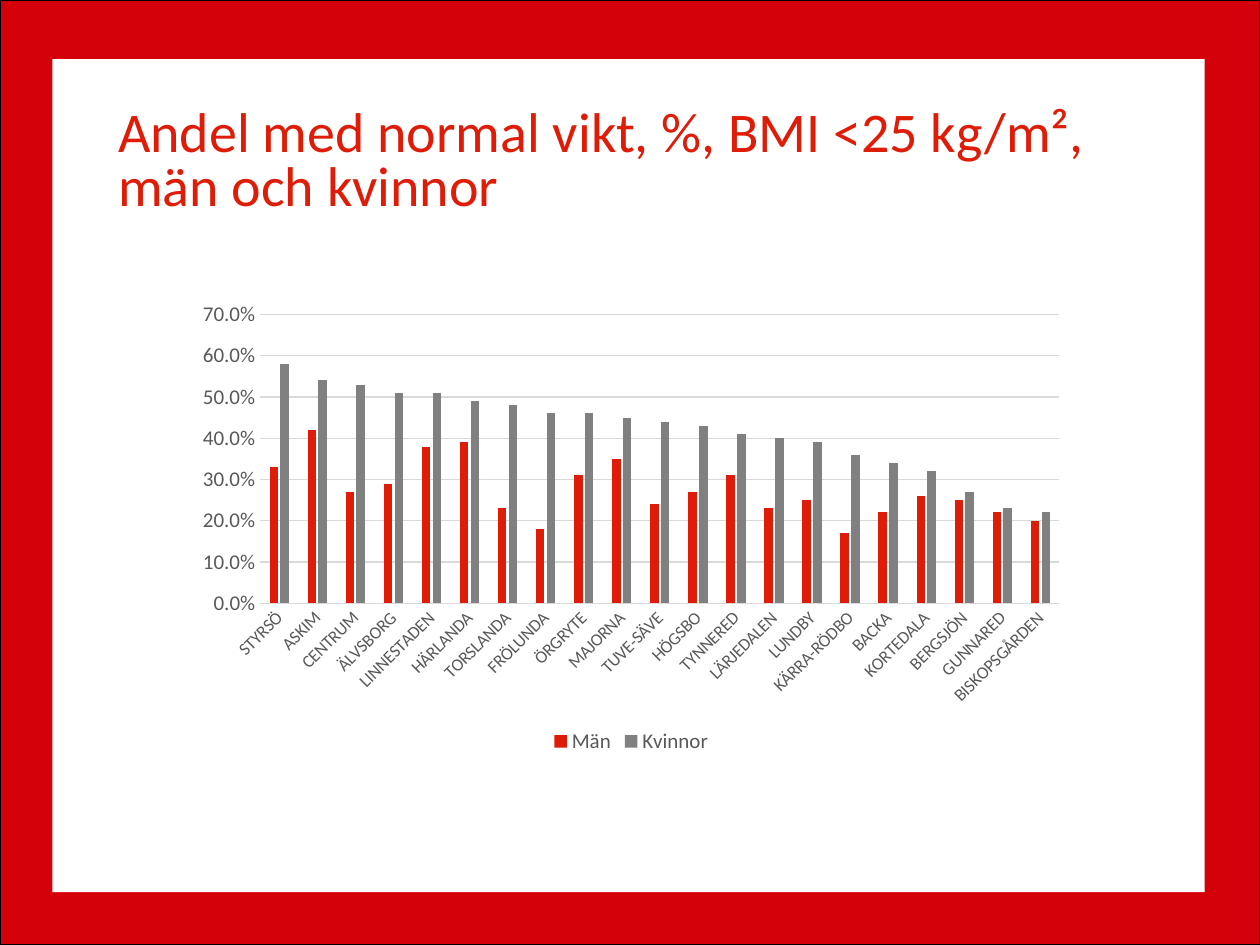
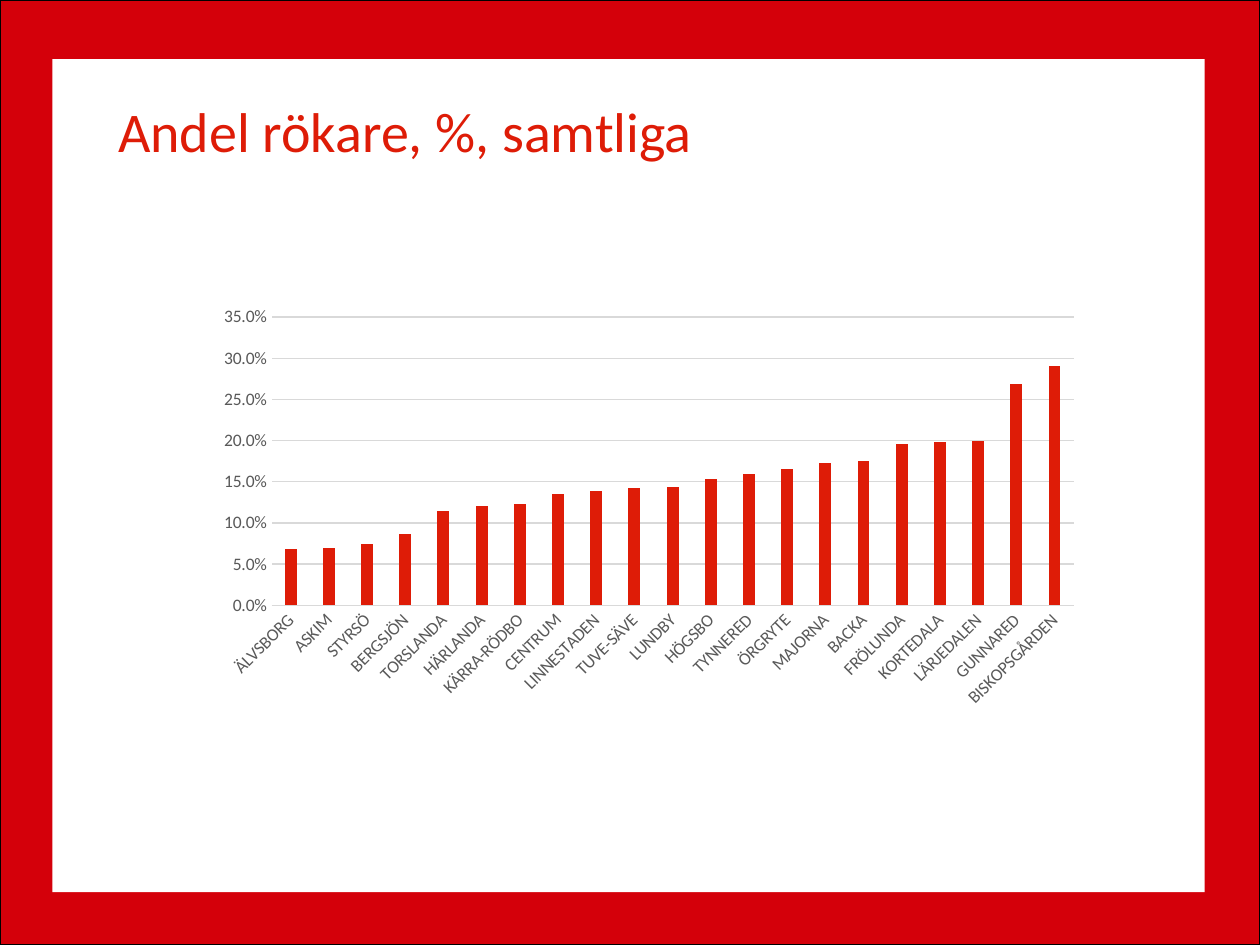
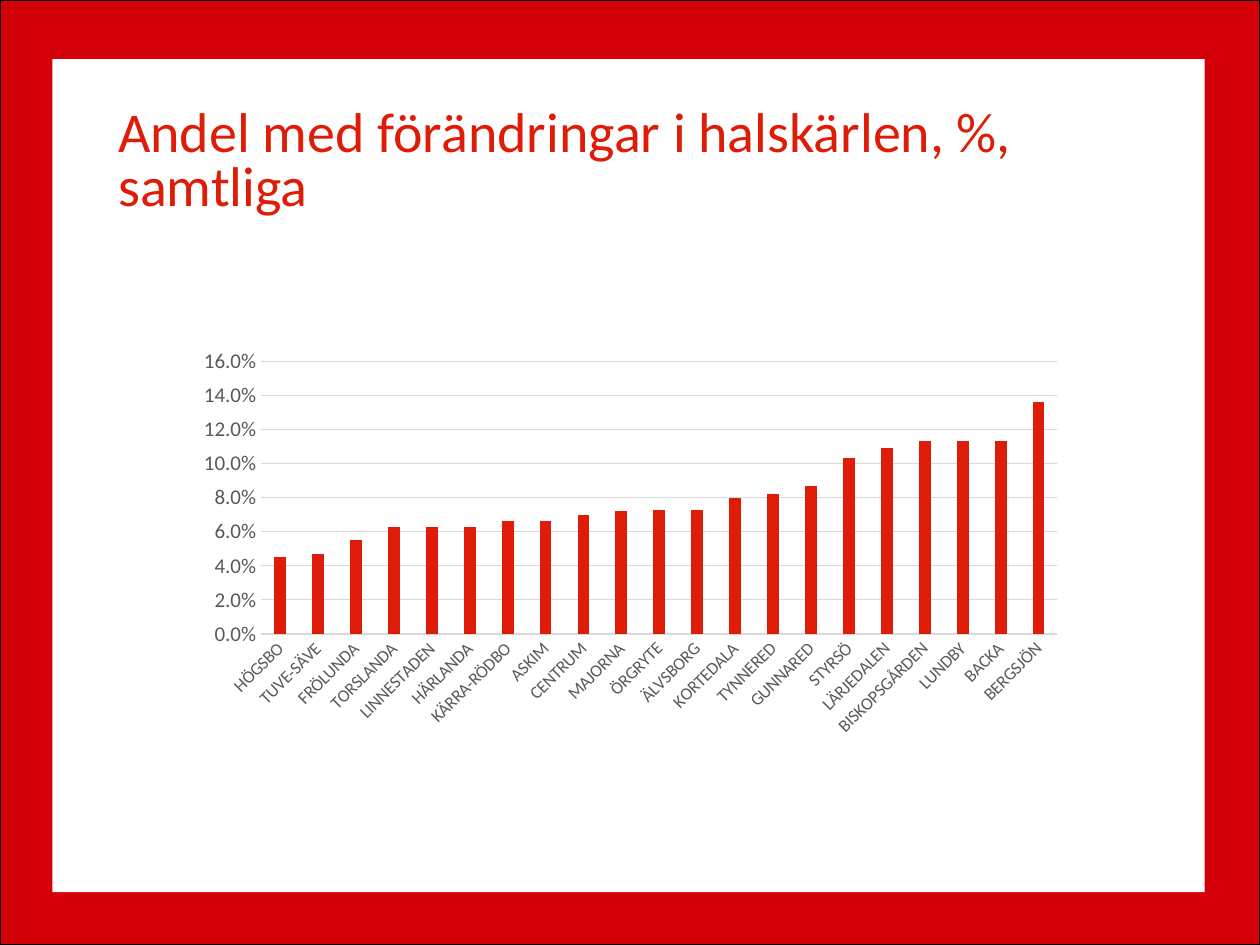
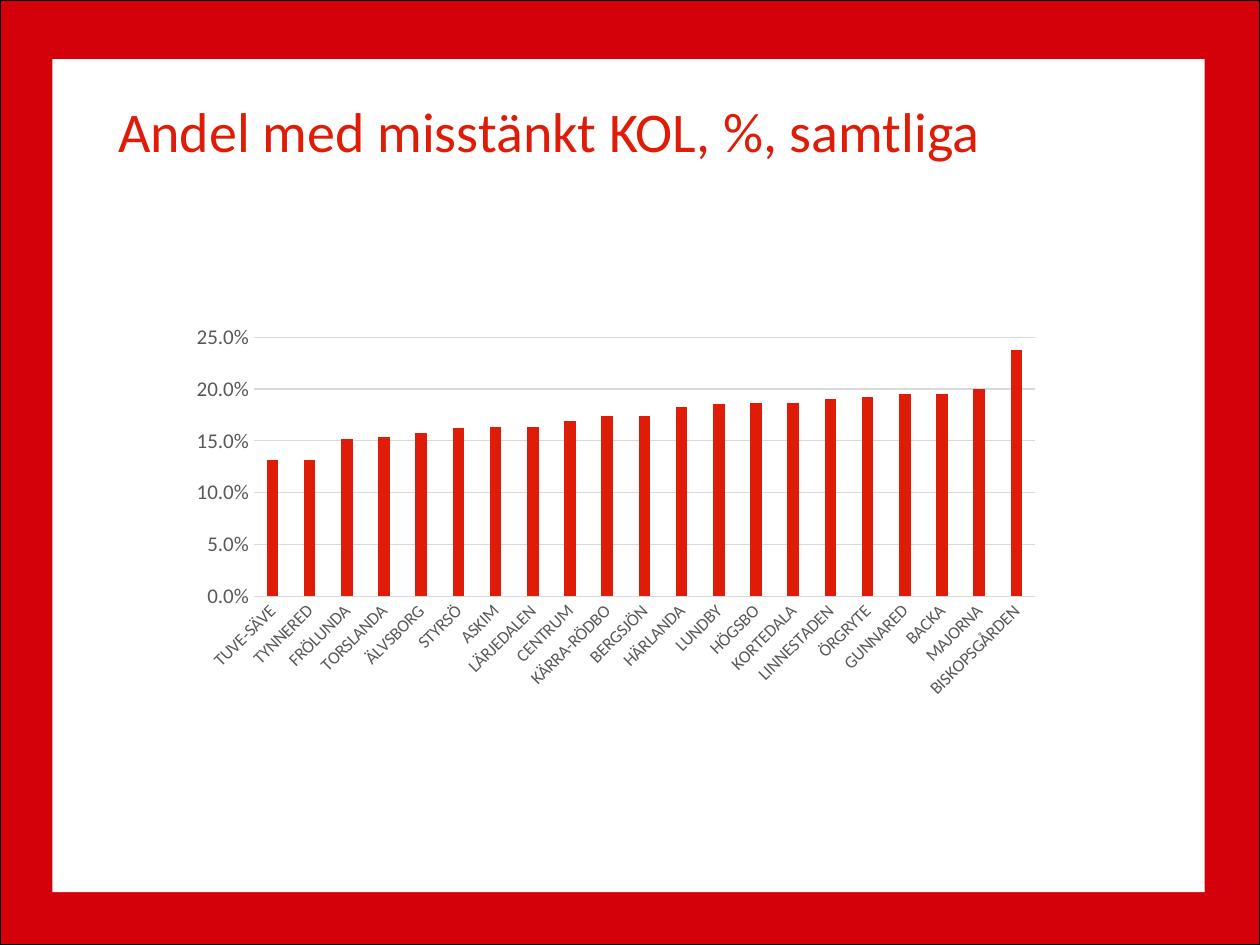
from lxml import etree
from pptx import Presentation
from pptx.chart.data import CategoryChartData
from pptx.dml.color import RGBColor
from pptx.enum.chart import XL_CHART_TYPE, XL_LEGEND_POSITION, XL_TICK_MARK
from pptx.enum.shapes import MSO_SHAPE
from pptx.enum.text import MSO_ANCHOR
from pptx.oxml.ns import qn
from pptx.util import Pt

COLUMNS = XL_CHART_TYPE.COLUMN_CLUSTERED
LEGEND_BOTTOM = XL_LEGEND_POSITION.BOTTOM
NO_TICK = XL_TICK_MARK.NONE
RECT = MSO_SHAPE.RECTANGLE
TOP = MSO_ANCHOR.TOP

FONT = "Calibri"
COLORS = {
    "frame": "D4000A",
    "frame_line": "000000",
    "paper": "FFFFFF",
    "title": "DE1C07",
    "label": "595959",
    "grid": "D9D9D9",
}
SERIES_COLORS = ["DE1C07", "808080"]
SLIDE_W, SLIDE_H = 720, 540
PLOT_AREA = {"x": 0.081, "y": 0.142, "w": 0.903, "h": 0.565}

CHARTS = [
    {
        "title": "Andel med normal vikt, %, BMI <25 kg/m², män och kvinnor",
        "box": (105.8, 167.3, 509.8, 266.4),
        "value_size": 12,
        "districts": "STYRSÖ ASKIM CENTRUM ÄLVSBORG LINNESTADEN HÄRLANDA TORSLANDA "
                     "FRÖLUNDA ÖRGRYTE MAJORNA TUVE-SÄVE HÖGSBO TYNNERED LÄRJEDALEN "
                     "LUNDBY KÄRRA-RÖDBO BACKA KORTEDALA BERGSJÖN GUNNARED BISKOPSGÅRDEN",
        "series": {
            "Män": [0.33, 0.42, 0.27, 0.29, 0.38, 0.39, 0.23, 0.18, 0.31, 0.35, 0.24,
                    0.27, 0.31, 0.23, 0.25, 0.17, 0.22, 0.26, 0.25, 0.22, 0.2],
            "Kvinnor": [0.58, 0.54, 0.53, 0.51, 0.51, 0.49, 0.48, 0.46, 0.46, 0.45, 0.44,
                        0.43, 0.41, 0.4, 0.39, 0.36, 0.34, 0.32, 0.27, 0.23, 0.22],
        },
    },
    {
        "title": "Andel rökare, %, samtliga",
        "box": (114.1, 139.8, 507.6, 291.6),
        "value_size": 10,
        "districts": "ÄLVSBORG ASKIM STYRSÖ BERGSJÖN TORSLANDA HÄRLANDA KÄRRA-RÖDBO "
                     "CENTRUM LINNESTADEN TUVE-SÄVE LUNDBY HÖGSBO TYNNERED ÖRGRYTE "
                     "MAJORNA BACKA FRÖLUNDA KORTEDALA LÄRJEDALEN GUNNARED BISKOPSGÅRDEN",
        "series": {
            "Series 1": [0.068, 0.069, 0.074, 0.087, 0.114, 0.12, 0.123, 0.135, 0.139,
                         0.142, 0.144, 0.154, 0.16, 0.165, 0.173, 0.175, 0.196, 0.198,
                         0.199, 0.269, 0.29],
        },
    },
    {
        "title": "Andel med förändringar i halskärlen, %, samtliga",
        "box": (108.4, 167.3, 504, 275.8),
        "value_size": 12,
        "districts": "HÖGSBO TUVE-SÄVE FRÖLUNDA TORSLANDA LINNESTADEN HÄRLANDA KÄRRA-RÖDBO "
                     "ASKIM CENTRUM MAJORNA ÖRGRYTE ÄLVSBORG KORTEDALA TYNNERED GUNNARED "
                     "STYRSÖ LÄRJEDALEN BISKOPSGÅRDEN LUNDBY BACKA BERGSJÖN",
        "series": {
            "Series 1": [0.045, 0.047, 0.055, 0.063, 0.063, 0.063, 0.066, 0.066, 0.07,
                         0.072, 0.073, 0.073, 0.08, 0.082, 0.087, 0.103, 0.109, 0.113,
                         0.113, 0.113, 0.136],
        },
    },
    {
        "title": "Andel med misstänkt KOL, %, samtliga",
        "box": (105, 155.5, 494.4, 262.1),
        "value_size": 12,
        "districts": "TUVE-SÄVE TYNNERED FRÖLUNDA TORSLANDA ÄLVSBORG STYRSÖ ASKIM "
                     "LÄRJEDALEN CENTRUM KÄRRA-RÖDBO BERGSJÖN HÄRLANDA LUNDBY HÖGSBO "
                     "KORTEDALA LINNESTADEN ÖRGRYTE GUNNARED BACKA MAJORNA BISKOPSGÅRDEN",
        "series": {
            "Series 1": [0.132, 0.132, 0.152, 0.154, 0.158, 0.162, 0.163, 0.163, 0.169,
                         0.174, 0.174, 0.183, 0.186, 0.187, 0.187, 0.19, 0.192, 0.195,
                         0.195, 0.2, 0.238],
        },
    },
]


def rgb(name):
    return RGBColor.from_string(COLORS[name])


def set_font(font, size, color):
    font.name = FONT
    font.size = Pt(size)
    font.color.rgb = rgb(color)


def set_line(line, color):
    line.color.rgb = rgb(color)
    line.width = Pt(0.75)


def add_rect(s, x, y, w, h, fill):
    sp = s.shapes.add_shape(RECT, Pt(x), Pt(y), Pt(w), Pt(h))
    sp.shadow.inherit = False
    sp.fill.solid()
    sp.fill.fore_color.rgb = rgb(fill)
    sp.line.fill.background()
    return sp


def add_master_frame(prs, s):
    """Draw the red border and white sheet on s, then move them to the master."""
    border = add_rect(s, 0, 0, SLIDE_W, SLIDE_H, "frame")
    set_line(border.line, "frame_line")
    sheet = add_rect(s, 30, 33.8, 658.5, 476, "paper")
    tree = prs.slide_master.shapes._spTree
    for position, sp in enumerate((border, sheet), start=2):
        tree.insert(position, sp._element)


def add_title(s, text):
    tf = s.shapes.add_textbox(Pt(60.5), Pt(59), Pt(600.5), Pt(72)).text_frame
    tf.word_wrap = True
    tf.vertical_anchor = TOP
    p = tf.paragraphs[0]
    p.text = text
    p.line_spacing = 0.8
    set_font(p.runs[0].font, 32, "title")


def fix_plot_area(chart):
    """Pin the inner plot area to the shared fractions of the chart."""
    plot_area = chart.plots[0]._element.getparent()
    for old in plot_area.findall(qn("c:layout")):
        plot_area.remove(old)
    layout = etree.Element(qn("c:layout"))
    plot_area.insert(0, layout)
    manual = etree.SubElement(layout, qn("c:manualLayout"))
    settings = {"layoutTarget": "inner", "xMode": "edge", "yMode": "edge", **PLOT_AREA}
    for tag, value in settings.items():
        etree.SubElement(manual, qn(f"c:{tag}")).set("val", str(value))


def format_category_axis(axis):
    axis.major_tick_mark = axis.minor_tick_mark = NO_TICK
    set_line(axis.format.line, "grid")
    set_font(axis.tick_labels.font, 10, "label")
    body = axis._element.find(qn("c:txPr")).find(qn("a:bodyPr"))
    body.set("rot", "-2700000")
    body.set("vert", "horz")


def format_value_axis(axis, size):
    axis.major_tick_mark = axis.minor_tick_mark = NO_TICK
    axis.format.line.fill.background()
    axis.has_major_gridlines = True
    set_line(axis.major_gridlines.format.line, "grid")
    axis.tick_labels.number_format = "###0.0%"
    axis.tick_labels.number_format_is_linked = False
    set_font(axis.tick_labels.font, size, "label")


def add_column_chart(s, box, value_size, districts, series):
    data = CategoryChartData(number_format="###0.0%")
    data.categories = districts.split()
    for name, values in series.items():
        data.add_series(name, values)
    chart = s.shapes.add_chart(COLUMNS, *map(Pt, box), data).chart
    chart.has_title = False
    set_font(chart.font, 10, "label")

    plot = chart.plots[0]
    plot.gap_width, plot.overlap, plot.vary_by_categories = 219, -27, False
    for ser, color in zip(plot.series, SERIES_COLORS):
        ser.format.fill.solid()
        ser.format.fill.fore_color.rgb = RGBColor.from_string(color)
    format_category_axis(chart.category_axis)
    format_value_axis(chart.value_axis, value_size)

    chart.has_legend = len(series) > 1
    if chart.has_legend:
        chart.legend.position = LEGEND_BOTTOM
        chart.legend.include_in_layout = False
        set_font(chart.legend.font, 12, "label")
    else:
        fix_plot_area(chart)


def main():
    prs = Presentation()
    prs.slide_width, prs.slide_height = Pt(SLIDE_W), Pt(SLIDE_H)
    blank = prs.slide_layouts[6]
    for number, c in enumerate(CHARTS):
        s = prs.slides.add_slide(blank)
        if number == 0:
            add_master_frame(prs, s)
        add_title(s, c["title"])
        add_column_chart(s, c["box"], c["value_size"], c["districts"], c["series"])
    prs.save("out.pptx")


if __name__ == "__main__":
    main()
